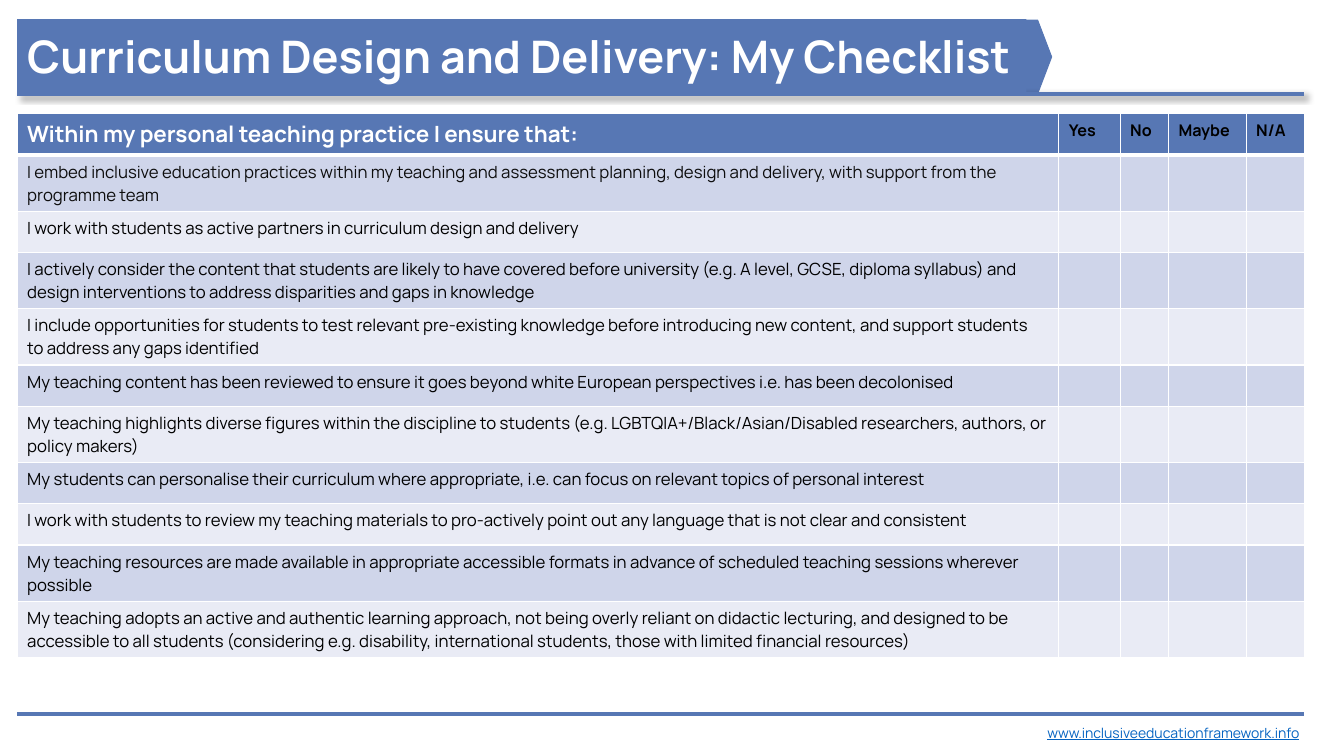
from lxml import etree
from pptx import Presentation
from pptx.dml.color import RGBColor
from pptx.enum.shapes import MSO_CONNECTOR, MSO_SHAPE
from pptx.enum.text import MSO_ANCHOR, PP_ALIGN
from pptx.oxml import parse_xml
from pptx.oxml.ns import nsdecls, qn
from pptx.util import Inches, Pt

STRAIGHT = MSO_CONNECTOR.STRAIGHT
PENTAGON = MSO_SHAPE.PENTAGON
MIDDLE = MSO_ANCHOR.MIDDLE
LEFT_ALIGN = PP_ALIGN.LEFT

FONT = "Manrope"
COLORS = {
    "blue": "5777B4", "band_dark": "CFD5EA", "band_light": "E9EBF5",
    "white": "FFFFFF", "black": "000000", "ink": "0D0D0D", "link": "0563C1",
}

TITLE = "Curriculum Design and Delivery: My Checklist"
HEADERS = ["Within my personal teaching practice I ensure that:", "Yes", "No", "Maybe", "N/A"]
STATEMENTS = [
    "I embed inclusive education practices within my teaching and assessment planning, design and delivery, with support from the programme team",
    "I work with students as active partners in curriculum design and delivery",
    "I actively consider the content that students are likely to have covered before university (e.g. A level, GCSE, diploma syllabus) and design interventions to address disparities and gaps in knowledge",
    "I include opportunities for students to test relevant pre-existing knowledge before introducing new content, and support students to address any gaps identified",
    "My teaching content has been reviewed to ensure it goes beyond white European perspectives i.e. has been decolonised",
    "My teaching highlights diverse figures within the discipline to students (e.g. LGBTQIA+/Black/Asian/Disabled researchers, authors, or policy makers)",
    "My students can personalise their curriculum where appropriate, i.e. can focus on relevant topics of personal interest",
    "I work with students to review my teaching materials to pro-actively point out any language that is not clear and consistent",
    "My teaching resources are made available in appropriate accessible formats in advance of scheduled teaching sessions wherever possible",
    "My teaching adopts an active and authentic learning approach, not being overly reliant on didactic lecturing, and designed to be accessible to all students (considering e.g. disability, international students, those with limited financial resources)",
]
ADDRESS = "www.inclusiveeducationframework.info"

LEFT, RIGHT = 0.17, 12.93
COLUMNS = [10.33, 0.61, 0.48, 0.77, 0.58]
ROW_HEIGHT = 0.41


def rgb(name):
    return RGBColor.from_string(COLORS[name])


def fill_with(obj, color):
    obj.fill.solid()
    obj.fill.fore_color.rgb = rgb(color)


def write(tf, text, size, color, bold=False, underline=None):
    tf.text = text
    p = tf.paragraphs[0]
    p.alignment = LEFT_ALIGN
    font = p.runs[0].font
    font.name, font.size, font.bold, font.underline = FONT, Pt(size), bold, underline
    font.color.rgb = rgb(color)


def add_rule(s, y):
    rule = s.shapes.add_connector(STRAIGHT, Inches(LEFT), Inches(y), Inches(RIGHT), Inches(y))
    rule.line.color.rgb = rgb("blue")
    rule.line.width = Pt(3)
    return etree.SubElement(rule._element.spPr, qn("a:effectLst"))


def add_banner(s):
    arrow = s.shapes.add_shape(PENTAGON, Inches(8.54), Inches(0.2), Inches(1.89), Inches(0.73))
    arrow.adjustments[0] = 0.19
    arrow.shadow.inherit = False
    fill_with(arrow, "blue")
    arrow.line.color.rgb = rgb("blue")
    arrow.line.width = Pt(0.75)

    effects = add_rule(s, 0.93)
    effects.append(parse_xml(
        f'<a:outerShdw {nsdecls("a")} blurRad="{Pt(4)}" dist="{Pt(3)}" dir="2700000">'
        f'<a:srgbClr val="{COLORS["black"]}"><a:alpha val="40000"/></a:srgbClr></a:outerShdw>'))

    title = s.shapes.title
    title.left, title.top = Inches(LEFT), Inches(0.19)
    title.width, title.height = Inches(10.01), Inches(0.73)
    fill_with(title, "blue")
    write(title.text_frame, TITLE, 32, "white", bold=True)
    title.text_frame.vertical_anchor = MIDDLE
    s.shapes._spTree.append(title._element)


def format_cell(cell, fill, bottom=1):
    props = cell._tc.get_or_add_tcPr()
    for side, width in (("L", 1), ("R", 1), ("T", 1), ("B", bottom)):
        props.append(parse_xml(
            f'<a:ln{side} {nsdecls("a")} w="{Pt(width)}"><a:solidFill>'
            f'<a:srgbClr val="{COLORS["white"]}"/></a:solidFill></a:ln{side}>'))
    fill_with(cell, fill)


def add_checklist(s):
    count = len(STATEMENTS) + 1
    table = s.shapes.add_table(count, len(COLUMNS), Inches(LEFT), Inches(1.13),
                               Inches(RIGHT - LEFT), Inches(count * ROW_HEIGHT)).table
    for column, width in zip(table.columns, COLUMNS):
        column.width = Inches(width)
    for row in table.rows:
        row.height = Inches(ROW_HEIGHT)

    for c, header in enumerate(HEADERS):
        cell = table.cell(0, c)
        size, color = (11.5, "black") if c else (16, "white")
        write(cell.text_frame, header, size, color, bold=True)
        format_cell(cell, "blue", bottom=3)

    for r, statement in enumerate(STATEMENTS, 1):
        write(table.cell(r, 0).text_frame, statement, 12, "ink" if r == 1 else "black")
        for c in range(len(COLUMNS)):
            format_cell(table.cell(r, c), "band_dark" if r % 2 else "band_light")


def add_footer(s):
    box = s.shapes.add_textbox(Inches(10.29), Inches(7.14), Inches(2.8), Inches(0.27))
    box.text_frame.word_wrap = True
    write(box.text_frame, ADDRESS, 10, "link", underline=True)
    add_rule(s, 7.08)


def main():
    prs = Presentation()
    prs.slide_width, prs.slide_height = Inches(13.33), Inches(7.5)
    s = prs.slides.add_slide(prs.slide_layouts[5])
    add_banner(s)
    add_checklist(s)
    add_footer(s)
    prs.save("out.pptx")


if __name__ == "__main__":
    main()
